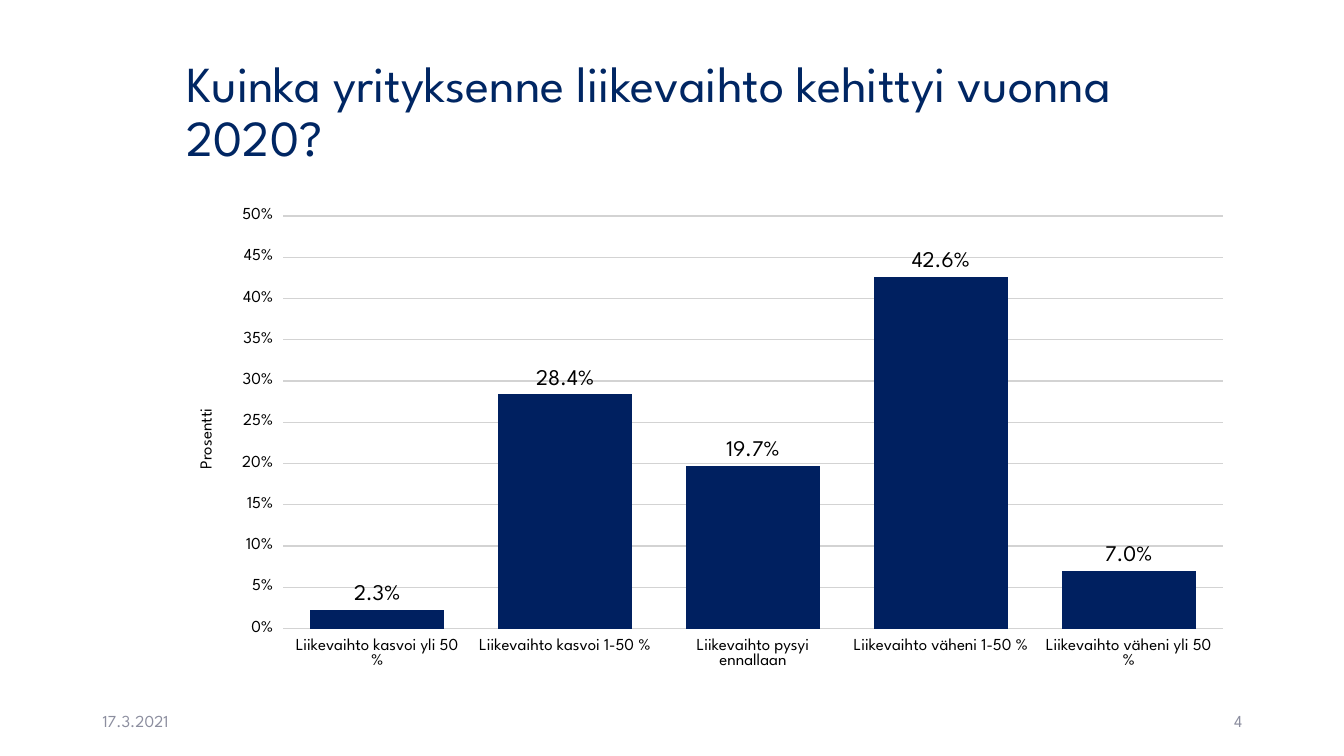
import pptx
import pptx.chart.data
import pptx.dml.color
import pptx.enum.chart
import pptx.enum.text
import pptx.oxml
import pptx.oxml.ns
import pptx.util

Inches = pptx.util.Inches
Pt = pptx.util.Pt
ALIGN = pptx.enum.text.PP_ALIGN
FACE = "League Spartan"
NAVY = "002060"
ANSWERS = {
    "Liikevaihto kasvoi yli 50 %": 0.023,
    "Liikevaihto kasvoi 1-50 %": 0.284,
    "Liikevaihto pysyi ennallaan": 0.197,
    "Liikevaihto väheni 1-50 %": 0.426,
    "Liikevaihto väheni yli 50 %": 0.07,
}


def color(code):
    return pptx.dml.color.RGBColor.from_string(code)


def style(font, size, code):
    font.name = FACE
    font.size = Pt(size)
    font.bold = False
    font.color.rgb = color(code)


def fill_text(shape, text, size, code, align=ALIGN.LEFT):
    frame = shape.text_frame
    frame.word_wrap = True
    frame.vertical_anchor = pptx.enum.text.MSO_ANCHOR.MIDDLE
    frame.text = text
    line = frame.paragraphs[0]
    line.alignment = align
    style(line.font, size, code)
    return line


def add_title(slide, left, top, width, height):
    title = slide.shapes.title
    title.left, title.top = Inches(left), Inches(top)
    title.width, title.height = Inches(width), Inches(height)
    line = fill_text(title, "Kuinka yrityksenne liikevaihto kehittyi vuonna 2020?",
                     36, "002663")
    line.line_spacing = 0.9


def add_footer(slide, left, top, width, height):
    """Place the date at the left end of the box and the page number at the right."""
    part = 3
    for text, start, align in (("17.3.2021", left, ALIGN.LEFT),
                               ("4", left + width - part, ALIGN.RIGHT)):
        box = slide.shapes.add_textbox(Inches(start), Inches(top),
                                       Inches(part), Inches(height))
        fill_text(box, text, 12, "8C8E9F", align)


def set_plot(chart, x, y, w, h):
    """Fix the inner plot area, in fractions of the chart, on a white ground."""
    area = chart._chartSpace.chart.plotArea
    for old in area.findall(pptx.oxml.ns.qn("c:layout")):
        area.remove(old)
    sizes = "".join(f'<c:{key} val="{val}"/>'
                    for key, val in (("x", x), ("y", y), ("w", w), ("h", h)))
    area.insert(0, pptx.oxml.parse_xml(
        f'<c:layout {pptx.oxml.ns.nsdecls("c")}><c:manualLayout>'
        '<c:layoutTarget val="inner"/><c:xMode val="edge"/><c:yMode val="edge"/>'
        f'{sizes}</c:manualLayout></c:layout>'))
    area.append(pptx.oxml.parse_xml(
        f'<c:spPr {pptx.oxml.ns.nsdecls("c", "a")}><a:solidFill>'
        '<a:srgbClr val="FFFFFF"/></a:solidFill></c:spPr>'))


def format_axes(chart):
    for axis in (chart.category_axis, chart.value_axis):
        style(axis.tick_labels.font, 12, "000000")
        axis.format.line.fill.background()
    axis = chart.value_axis
    axis.minimum_scale, axis.maximum_scale = 0, 0.5
    axis.major_unit = 0.05
    axis.tick_labels.number_format = "0%"
    axis.tick_labels.number_format_is_linked = False
    grid = axis.major_gridlines.format.line
    grid.color.rgb = color("D3D3D3")
    grid.width = Pt(1)
    frame = axis.axis_title.text_frame
    frame.text = "Prosentti"
    style(frame.paragraphs[0].font, 12, "000000")
    frame._txBody.bodyPr.set("rot", "-5400000")
    frame._txBody.bodyPr.set("vert", "horz")


def format_bars(plot):
    plot.gap_width = 40
    plot.vary_by_categories = False
    bars = plot.series[0]
    bars.format.fill.solid()
    bars.format.fill.fore_color.rgb = color(NAVY)
    labels = bars.data_labels
    labels.show_value = True
    labels.position = pptx.enum.chart.XL_LABEL_POSITION.OUTSIDE_END
    labels.number_format = "0.0%"
    labels.number_format_is_linked = False
    style(labels.font, 16, "000000")


def add_columns(slide, left, top, width, height):
    data = pptx.chart.data.CategoryChartData(number_format="0.0%")
    data.categories = list(ANSWERS)
    data.add_series("Series 1", list(ANSWERS.values()))
    chart = slide.shapes.add_chart(
        pptx.enum.chart.XL_CHART_TYPE.COLUMN_CLUSTERED,
        Inches(left), Inches(top), Inches(width), Inches(height), data).chart
    chart.has_title = False
    chart.has_legend = False
    style(chart.font, 11, "000000")
    format_axes(chart)
    format_bars(chart.plots[0])
    set_plot(chart, 0.1, 0.03, 0.88, 0.86)


def main():
    deck = pptx.Presentation()
    deck.slide_width, deck.slide_height = Inches(13.33), Inches(7.5)
    slide = deck.slides.add_slide(deck.slide_layouts[5])
    add_title(slide, 1.75, 0.4, 10.59, 1.45)
    add_columns(slide, 1.75, 2, 10.59, 4.76)
    add_footer(slide, 0.92, 6.95, 11.5, 0.4)
    deck.save("out.pptx")


if __name__ == "__main__":
    main()
